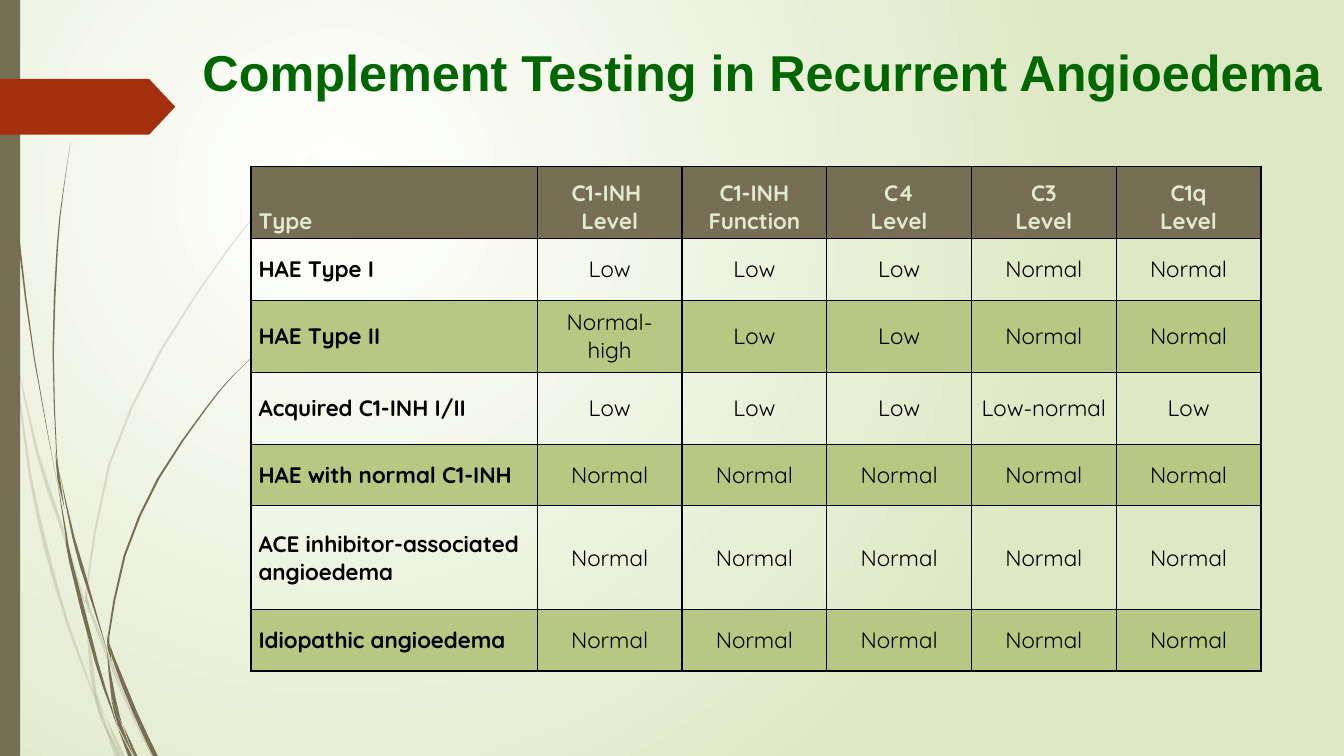
from lxml import etree
from pptx import Presentation
from pptx.dml.color import RGBColor
from pptx.enum.shapes import MSO_SHAPE
from pptx.enum.text import MSO_ANCHOR, PP_ALIGN
from pptx.oxml import parse_xml
from pptx.oxml.ns import qn
from pptx.util import Pt

RECT, ARROW = MSO_SHAPE.RECTANGLE, MSO_SHAPE.PENTAGON
LOW, MID = MSO_ANCHOR.BOTTOM, MSO_ANCHOR.MIDDLE
LEFT, CENTER = PP_ALIGN.LEFT, PP_ALIGN.CENTER
NS = "http://schemas.openxmlformats.org/drawingml/2006/main"
BROWN, RED, GREEN, BAND, CREAM = "766F54", "A53010", "006600", "B6C882", "E3EACF"
WIDE, HIGH = 960, 540

# Grass parts: widths at tip, middle and root, then the centre line
FAINT = [
    ((0, 1, 0), [(0, 209), (7.7, 252)]),
    ((0, 2.9, 1), [(10.2, 248), (26.5, 323), (43.5, 375), (60.5, 431)]),
    ((0, 3, 3.6), [(63.4, 429), (65, 438), (90, 499), (110, 540.5)]),
    ((0, 2, 3.6), [(75.6, 512), (87.5, 540.5)]),
    ((0, 2.9, 0), [(8, 252), (12.2, 271), (21.3, 338), (33, 392), (48.5, 446),
                   (66.5, 495), (72.7, 514)]),
    ((0, 3, 0), [(60.5, 431), (64, 465), (68, 495), (75.6, 512)]),
    ((0, 1.7, 1), [(224.5, 110), (193, 142), (164.5, 176), (114.5, 251),
                   (78, 332), (62, 420), (62.5, 429)]),
    ((0, 2, 3.6), [(73, 514), (84, 540.5)]),
    ((0, 2, 0), [(61.2, 422), (63.4, 439)]),
    ((0, 2.9, 0), [(67, 492), (73, 513), (85.7, 540.5)]),
]
DARK = [
    ((0.7, 1.4, 0), [(2.5, 0), (5.2, 79), (13, 168), (24.5, 256), (41, 346)]),
    ((0, 2.5, 0), [(43.2, 340), (52.5, 384), (64.5, 425), (76.3, 464)]),
    ((0, 3, 3.6), [(79.2, 462), (81, 470), (96.5, 509), (111, 540)]),
    ((0, 2.9, 0), [(41, 343.5), (47.3, 382), (50.5, 401), (69, 473),
                   (79, 504), (84.2, 520)]),
    ((0, 1.2, 0), [(50.4, 101.5), (44.9, 139), (41, 176), (38, 251),
                   (40.5, 325), (43.2, 340)]),
    ((0, 1.5, 2.2), [(87.8, 518), (97, 540)]),
    ((0, 2, 0), [(39.6, 323), (42, 342), (46.1, 363.5)]),
    ((0, 1.7, 1), [(187.5, 248), (166, 269), (147, 292), (113, 342), (89, 397),
                   (77.5, 455), (79, 461)]),
    ((0, 1.5, 2.9), [(84.2, 520), (93, 540)]),
    ((0, 2.9, 0), [(76.3, 464), (81, 498), (87.5, 518)]),
    ((0, 2.2, 0), [(76.3, 454), (79.6, 472)]),
    ((0, 2.9, 0), [(79.2, 498), (85.5, 518), (95.5, 540)]),
]
COLS = [204.5] + [103.4] * 5
ROWS = [51.5, 44.1, 51.6, 51.6, 43.7, 74.3, 43.8]
DATA = [
    ["Type", "C1-INH \nLevel", "C1-INH Function", "C4\nLevel", "C3\nLevel", "C1q\nLevel"],
    ["HAE Type I", "Low", "Low", "Low", "Normal", "Normal"],
    ["HAE Type II", "Normal-high", "Low", "Low", "Normal", "Normal"],
    ["Acquired C1-INH I/II", "Low", "Low", "Low", "Low-normal", "Low"],
    ["HAE with normal C1-INH"] + ["Normal"] * 5,
    ["ACE inhibitor-associated angioedema"] + ["Normal"] * 5,
    ["Idiopathic angioedema"] + ["Normal"] * 5,
]


def color(text):
    return RGBColor.from_string(text)


def paint(shape, tone):
    shape.shadow.inherit = False
    shape.fill.solid()
    shape.fill.fore_color.rgb = color(tone)
    shape.line.fill.background()


def style(para, font, size, tone, bold):
    for run in para.runs:
        run.font.name = font
        run.font.size = Pt(size)
        run.font.bold = bold
        run.font.color.rgb = color(tone)


def backdrop(slide):
    """Fill the background with a radial gradient centred at the upper left."""
    fill = slide.background.fill
    fill.gradient()
    for stop, tone in zip(fill.gradient_stops, ("FFFFFF", "DFE8C4")):
        stop.color.rgb = color(tone)
    grad = next(slide.background._cSld.iter(qn("a:gradFill")))
    grad.replace(grad.find(qn("a:lin")), parse_xml(
        f'<a:path xmlns:a="{NS}" path="circle">'
        '<a:fillToRect l="50000" t="50000" r="100000" b="100000"/></a:path>'))


def smooth(knots, steps=2):
    """Return points of a Catmull-Rom curve through the knots."""
    ends = [knots[0]] + knots + [knots[-1]]
    curve = []
    for a, b, c, d in zip(ends, ends[1:], ends[2:], ends[3:]):
        for step in range(steps):
            t = step / steps
            curve.append(tuple(
                q + t * (r - p + t * (2 * p - 5 * q + 4 * r - s
                                      + t * (3 * q - p - 3 * r + s))) / 2
                for p, q, r, s in zip(a, b, c, d)))
    return curve + [knots[-1]]


def taper(widths, t):
    """Return half the width at the share t of the way from tip to root."""
    tip, mid, root = widths
    if t < 0.5:
        return tip / 2 + (mid - tip) * t
    return mid / 2 + (root - mid) * (t - 0.5)


def grass(slide, x, y, parts, tone, alpha=100):
    """Draw the parts of a tuft of grass as one group."""
    group = slide.shapes.add_group_shape()
    for widths, knots in parts:
        curve = smooth(knots)
        half = [taper(widths, i / (len(curve) - 1)) for i in range(len(curve))]
        left = [(x + u - h, y + v) for (u, v), h in zip(curve, half)]
        right = [(x + u + h, y + v) for (u, v), h in zip(curve, half)]
        rim = [(Pt(u), Pt(v)) for u, v in left + right[::-1]]
        pen = group.shapes.build_freeform(*rim[0])
        pen.add_line_segments(rim[1:])
        blade = pen.convert_to_shape()
        paint(blade, tone)
        if alpha < 100:
            tint = blade.fill._xPr.find(qn("a:solidFill"))[0]
            etree.SubElement(tint, qn("a:alpha"), val=str(alpha * 1000))


def margin(slide, x, y, high):
    """Draw the side bar and the red marker that crosses it."""
    bar = slide.shapes.add_shape(RECT, Pt(x), Pt(y), Pt(14.4), Pt(high))
    paint(bar, BROWN)
    mark = slide.shapes.add_shape(ARROW, Pt(x), Pt(y + 56.4), Pt(125.2), Pt(39.8))
    mark.adjustments[0] = 0.47
    paint(mark, RED)


def title(slide, x, y, wide, high):
    frame = slide.shapes.add_textbox(Pt(x), Pt(y), Pt(wide), Pt(high)).text_frame
    frame.word_wrap = True
    frame.text = "Complement Testing in Recurrent Angioedema"
    para = frame.paragraphs[0]
    para.line_spacing = 0.9
    style(para, "Arial", 36, GREEN, True)


def border(cell):
    props = cell._tc.get_or_add_tcPr()
    for i, side in enumerate(("lnL", "lnR", "lnT", "lnB")):
        props.insert(i, parse_xml(
            f'<a:{side} xmlns:a="{NS}" w="12700"><a:solidFill>'
            f'<a:srgbClr val="000000"/></a:solidFill></a:{side}>'))


def results(slide, x, y):
    """Place the table of test results."""
    table = slide.shapes.add_table(len(ROWS), len(COLS), Pt(x), Pt(y),
                                   Pt(sum(COLS)), Pt(sum(ROWS))).table
    table.first_row = table.horz_banding = False
    for col, wide in zip(table.columns, COLS):
        col.width = Pt(wide)
    for i, (row, high) in enumerate(zip(table.rows, ROWS)):
        row.height = Pt(high)
        for j, cell in enumerate(row.cells):
            cell.text = DATA[i][j]
            cell.vertical_anchor = MID if i else LOW
            cell.margin_left = cell.margin_right = Pt(5.4)
            cell.margin_top = cell.margin_bottom = Pt(2.7)
            if i % 2:
                cell.fill.background()
            else:
                cell.fill.solid()
                cell.fill.fore_color.rgb = color(BAND if i else BROWN)
            border(cell)
            for para in cell.text_frame.paragraphs:
                para.alignment = CENTER if j else LEFT
                style(para, "Quicksand", 16, "000000" if i else CREAM, i == 0 or j == 0)


def main():
    deck = Presentation()
    deck.slide_width, deck.slide_height = Pt(WIDE), Pt(HIGH)
    slide = deck.slides.add_slide(deck.slide_layouts[6])
    backdrop(slide)
    grass(slide, 0, 0, FAINT, BROWN, 20)
    grass(slide, 0, 0, DARK, BROWN)
    margin(slide, 0, 0, HIGH)
    title(slide, 137.5, 31, 831, 53.3)
    results(slide, 179.3, 118.8)
    deck.save("out.pptx")


if __name__ == "__main__":
    main()
